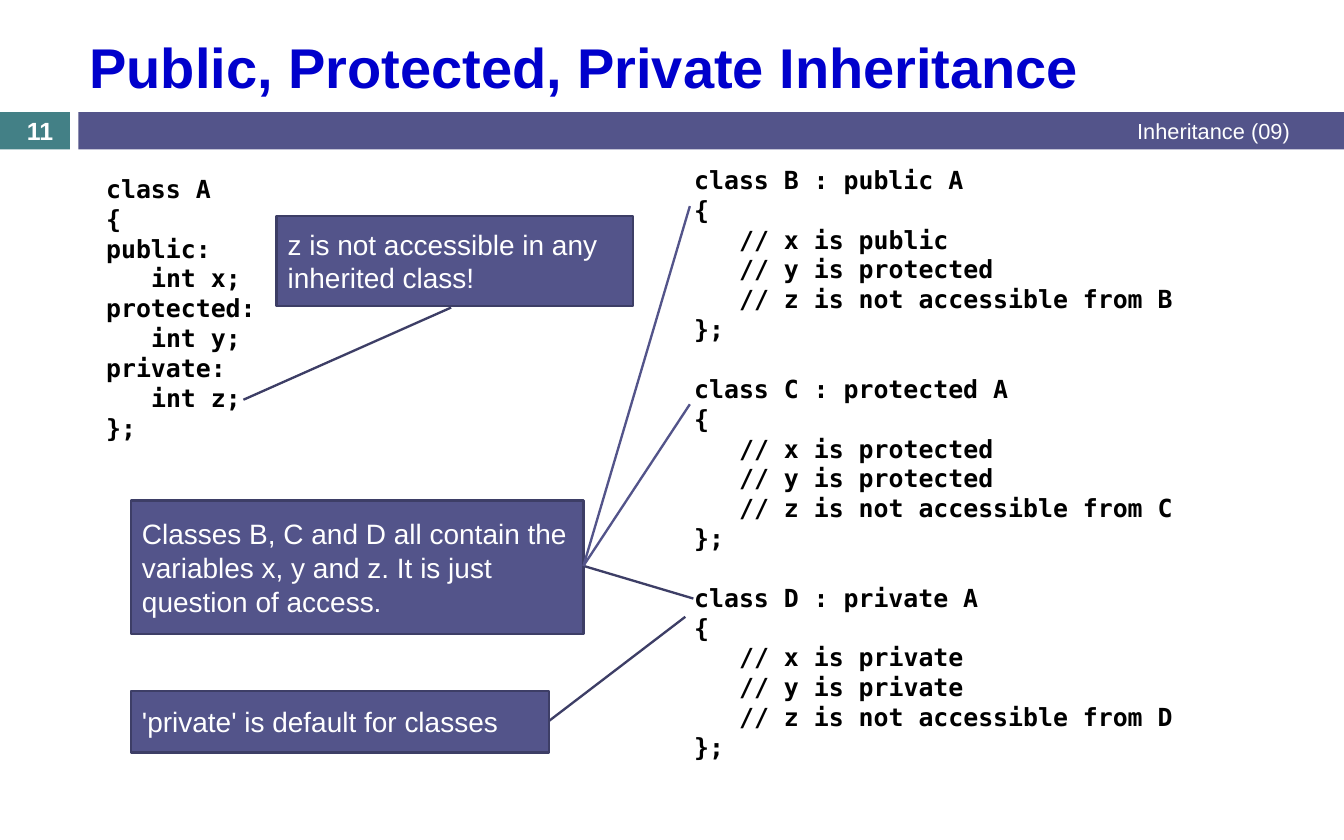
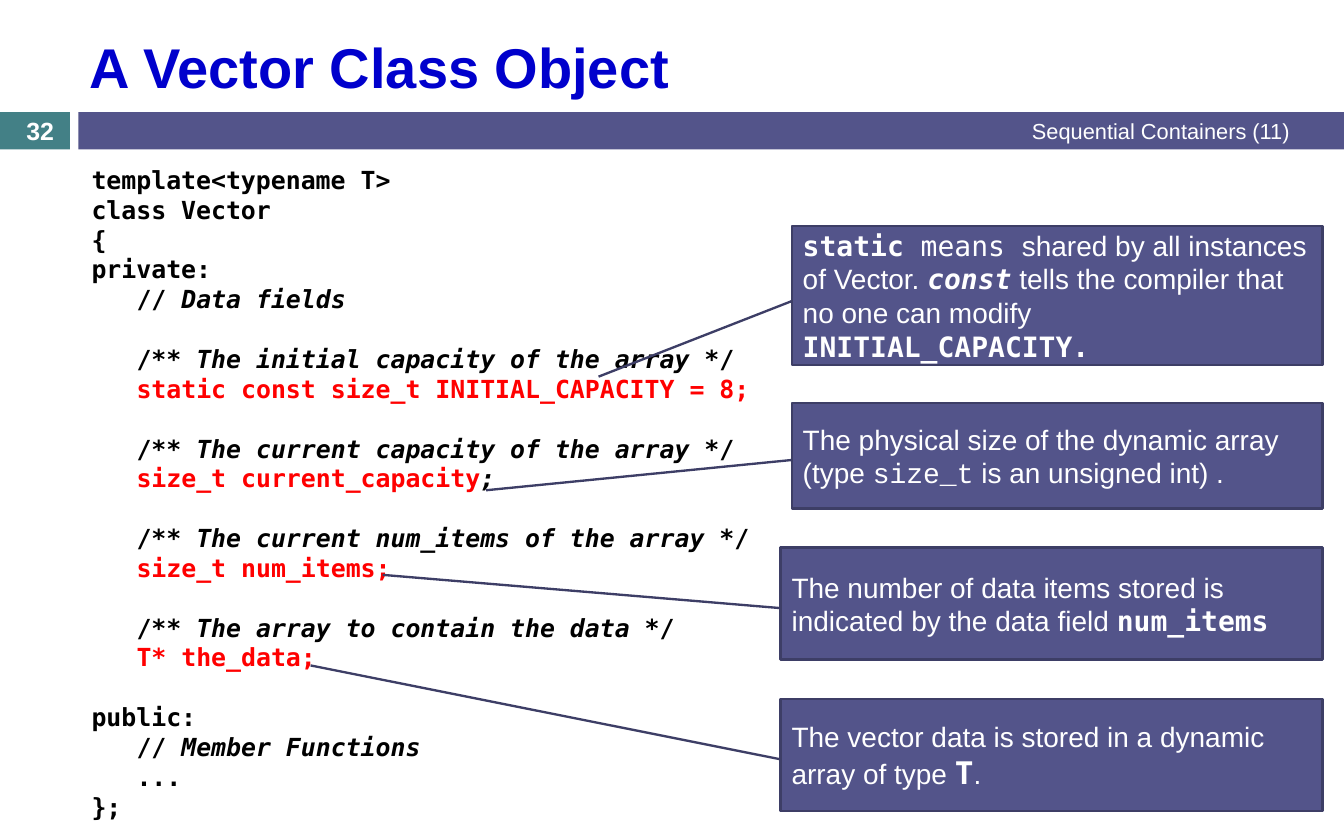
from collections import namedtuple

from lxml.etree import SubElement
from pptx import Presentation
from pptx.dml.color import RGBColor
from pptx.enum.shapes import MSO_CONNECTOR, MSO_SHAPE
from pptx.enum.text import MSO_ANCHOR, PP_ALIGN
from pptx.oxml.ns import qn
from pptx.util import Pt

Box = namedtuple("Box", "left top width height")
Style = namedtuple("Style", "size font color bold italic", defaults=(False, False))

WHITE, BLACK, RED = "FFFFFF", "000000", "FF0000"
TITLE_BLUE, TEAL, INDIGO, DARK_INDIGO = "0000CC", "438086", "53548A", "3D3E66"
SANS, MONO, COURIER = "Arial", "DejaVu Sans Mono", "Courier New"

TITLE = Style(36, SANS, TITLE_BLUE, True)
FOOTER = Style(14, SANS, WHITE)
NUMBER = Style(16, SANS, WHITE, True)
CODE = Style(16, MONO, BLACK, True)
REMARK = CODE._replace(italic=True)
FIELD = CODE._replace(color=RED)
NOTE = Style(18, SANS, WHITE)
NOTE_MONO = NOTE._replace(font=MONO)
NOTE_CODE = NOTE_MONO._replace(bold=True)

SLIDE_WIDTH, SLIDE_HEIGHT = 864, 540
HEADER_BOX = Box(0, 0, SLIDE_WIDTH, 96)
LINE_WIDTH = 1.5
CODE_PITCH = 19.2
CODE_INDENT = 28.9
RIGHT_MIDDLE, LEFT_MIDDLE, BOTTOM_MIDDLE = (1, 0.49), (0, 0.54), (0.49, 1.02)


def color(hex_string):
    return RGBColor.from_string(hex_string)


def lengths(*values):
    return [Pt(value) for value in values]


def add_runs(paragraph, runs):
    for text, style in runs:
        run = paragraph.add_run()
        run.text = text
        font = run.font
        font.size, font.name = Pt(style.size), style.font
        font.bold, font.italic = style.bold, style.italic
        font.color.rgb = color(style.color)


def add_filled_shape(slide, preset, box, fill):
    shape = slide.shapes.add_shape(preset, *lengths(*box))
    shape.shadow.inherit = False
    shape.fill.solid()
    shape.fill.fore_color.rgb = color(fill)
    shape.line.fill.background()
    return shape


def add_label(slide, box, text, style, align=PP_ALIGN.LEFT):
    frame = slide.shapes.add_textbox(*lengths(*box)).text_frame
    frame.word_wrap = True
    frame.vertical_anchor = MSO_ANCHOR.MIDDLE
    frame.paragraphs[0].alignment = align
    add_runs(frame.paragraphs[0], [(text, style)])


def add_header(slide, box, title, number, footer):
    left, top, width, height = box
    band_top, band_height, gutter = top + 72, 24, 50.4
    add_filled_shape(slide, MSO_SHAPE.RECTANGLE,
                     Box(left, band_top, 45, band_height), TEAL)
    add_filled_shape(slide, MSO_SHAPE.RECTANGLE,
                     Box(left + gutter, band_top, width - gutter, band_height), INDIGO)
    add_label(slide, Box(left + gutter, top + 13.7, 785.5, 57.6), title, TITLE)
    add_label(slide, Box(left + 444, band_top, 392.4, band_height),
              footer, FOOTER, PP_ALIGN.RIGHT)
    add_label(slide, Box(left, band_top + 1, 51.6, 22), number, NUMBER, PP_ALIGN.CENTER)


def add_code(slide, box, groups):
    frame = slide.shapes.add_textbox(*lengths(*box)).text_frame
    frame.word_wrap = True
    paragraph = frame.paragraphs[0]
    for group_index, group in enumerate(groups):
        for line_index, (level, *runs) in enumerate(group):
            if group_index or line_index:
                paragraph = frame.add_paragraph()
            paragraph.line_spacing = Pt(CODE_PITCH)
            if group_index and not line_index:
                paragraph.space_before = Pt(CODE_PITCH)
            if level:
                properties = paragraph._p.get_or_add_pPr()
                properties.set("marL", str(Pt(level * CODE_INDENT)))
                properties.set("indent", "0")
            add_runs(paragraph, runs)


def add_callout(slide, box, start, tip, runs):
    shape = add_filled_shape(slide, MSO_SHAPE.LINE_CALLOUT_1, box, INDIGO)
    shape.line.color.rgb = color(DARK_INDIGO)
    shape.line.width = Pt(LINE_WIDTH)
    start_x, start_y = start
    tip_x = (tip[0] - box.left) / box.width
    tip_y = (tip[1] - box.top) / box.height
    for index, value in enumerate((start_y, start_x, tip_y, tip_x)):
        shape.adjustments[index] = value
    frame = shape.text_frame
    frame.word_wrap = True
    frame.vertical_anchor = MSO_ANCHOR.MIDDLE
    frame.paragraphs[0].alignment = PP_ALIGN.LEFT
    add_runs(frame.paragraphs[0], runs)


def add_pointer(slide, start, tip):
    connector = slide.shapes.add_connector(MSO_CONNECTOR.STRAIGHT, *lengths(*start, *tip))
    connector.line.color.rgb = color(INDIGO)
    connector.line.width = Pt(LINE_WIDTH)
    SubElement(connector._element.spPr, qn("a:effectLst"))


def code_line(text, level=0):
    return (level, (text, CODE))


def block_comment(text):
    return (1, ("/** ", CODE), (text, REMARK), (" */", CODE))


def line_comment(text):
    return (1, ("// ", CODE), (text, REMARK))


def derived_class(name, access):
    inherited = "public" if access == "public" else access
    y_access = "protected" if access == "public" else access
    return [
        code_line(f"class {name} : {access} A"),
        code_line("{"),
        code_line(f"// x is {inherited}", 1),
        code_line(f"// y is {y_access}", 1),
        code_line(f"// z is not accessible from {name}", 1),
        code_line("};"),
    ]


def build_inheritance_slide(slide):
    add_header(slide, HEADER_BOX, "Public, Protected, Private Inheritance",
               "11", "Inheritance (09)")
    base_class = [code_line("class A"), code_line("{")]
    for access, variable in (("public", "x"), ("protected", "y"), ("private", "z")):
        base_class += [code_line(f"{access}:"), code_line(f"int {variable};", 1)]
    base_class.append(code_line("};"))
    add_code(slide, Box(61.2, 108, 156.2, 181.4), [base_class])
    add_code(slide, Box(439.2, 102.2, 390.2, 395.3),
             [derived_class("B", "public"), derived_class("C", "protected"),
              derived_class("D", "private")])

    add_callout(slide, Box(84.2, 444.2, 268.6, 39.6), RIGHT_MIDDLE, (440.6, 396.5),
                [("'private' is default for classes", NOTE)])
    classes_box = Box(84.2, 321.8, 290.9, 85.7)
    add_callout(slide, classes_box, RIGHT_MIDDLE, (445.8, 384.8),
                [("Classes B, C and D all contain the variables x, y and z. "
                  "It is just question of access.", NOTE)])
    pointer_start = (classes_box.left + classes_box.width,
                     classes_box.top + RIGHT_MIDDLE[1] * classes_box.height)
    for tip_y in (132.5, 259.9):
        add_pointer(slide, pointer_start, (443.5, tip_y))
    add_callout(slide, Box(177.8, 139, 229, 57.6), BOTTOM_MIDDLE, (156.5, 257),
                [("z is not accessible in any inherited class!", NOTE)])


def build_vector_slide(slide):
    add_header(slide, HEADER_BOX, "A Vector Class Object",
               "32", "Sequential Containers (11)")
    add_code(slide, Box(51.8, 102.2, 503.3, 433.4), [
        [code_line("template<typename T>"), code_line("class Vector"), code_line("{"),
         code_line("private:"), line_comment("Data fields")],
        [block_comment("The initial capacity of the array"),
         (1, ("static const size_t INITIAL_CAPACITY = 8;", FIELD))],
        [block_comment("The current capacity of the array"),
         (1, ("size_t current_capacity", FIELD), (";", REMARK))],
        [block_comment("The current num_items of the array"),
         (1, ("size_t num_items;", FIELD))],
        [block_comment("The array to contain the data"),
         (1, ("T* the_data;", FIELD))],
        [code_line("public:"), line_comment("Member Functions"),
         code_line("...", 1), code_line("};")],
    ])

    right_edge, upper_left, lower_left = 850.3, 509, 501.8
    callouts = [
        (upper_left, 145.4, 89.3, (384.8, 242.2),
         [("static ", NOTE_CODE), ("means ", NOTE_MONO),
          ("shared by all instances of Vector. ", NOTE),
          ("const", NOTE_CODE._replace(italic=True)),
          (" tells the compiler that no one can modify ", NOTE),
          ("INITIAL_CAPACITY.", NOTE_CODE)]),
        (upper_left, 259.2, 67.7, (312.5, 315.2),
         [("The physical size of the dynamic array (type ", NOTE),
          ("size_t", NOTE._replace(font=COURIER)),
          (" is an unsigned int) .", NOTE)]),
        (lower_left, 352.1, 72, (246, 369.6),
         [("The number of data items stored is indicated by the data field ", NOTE),
          ("num_items", NOTE_CODE)]),
        (lower_left, 449.3, 72, (199.7, 427.8),
         [("The vector data is stored in a dynamic array of type ", NOTE),
          ("T", NOTE_CODE._replace(size=20)), (".", NOTE)]),
    ]
    for left, top, height, tip, runs in callouts:
        add_callout(slide, Box(left, top, right_edge - left, height),
                    LEFT_MIDDLE, tip, runs)


def main():
    presentation = Presentation()
    presentation.slide_width, presentation.slide_height = lengths(SLIDE_WIDTH, SLIDE_HEIGHT)
    blank_layout = presentation.slide_layouts[6]
    for build_slide in (build_inheritance_slide, build_vector_slide):
        build_slide(presentation.slides.add_slide(blank_layout))
    presentation.save("out.pptx")


if __name__ == "__main__":
    main()
